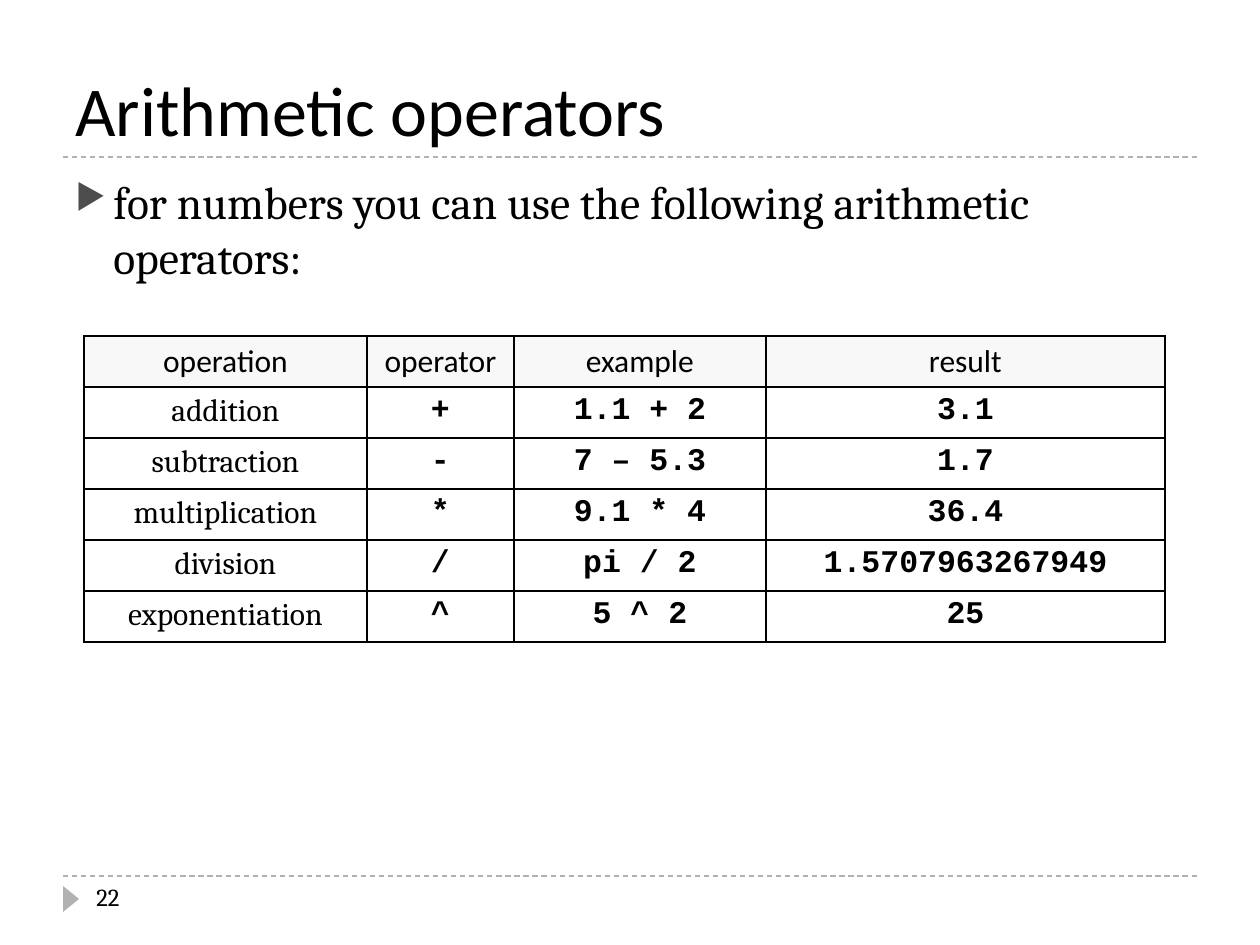
import pptx
import pptx.dml.color
import pptx.enum.dml
import pptx.enum.shapes
import pptx.enum.text
import pptx.oxml
import pptx.oxml.ns
import pptx.util

EMU_PER_PX = 914400 / 126
COLORS = {"text": "000000", "rule": "B2B2B2", "bullet": "4D4D4D",
          "header": "F8F8F8", "cell": "FFFFFF", "border": "000000"}

TITLE = "Arithmetic operators"
INTRO = "for numbers you can use the following arithmetic operators:"
PAGE_NUMBER = "22"
HEADER = ["operation", "operator", "example", "result"]
OPERATIONS = [
    ["addition", "+", "1.1 + 2", "3.1"],
    ["subtraction", "-", "7 – 5.3", "1.7"],
    ["multiplication", "*", "9.1 * 4", "36.4"],
    ["division", "/", "pi / 2", "1.5707963267949"],
    ["exponentiation", "^", "5 ^ 2", "25"],
]

TITLE_BOX = (63, 21, 1134, 136)
INTRO_BOX = (63, 168, 1134, 680)
NUMBER_BOX = (84, 876, 273, 50)
MARKER_BOX = (58, 891, 26, 16)
RULE_LEFT, RULE_RIGHT = 63, 1197
RULE_TOPS = [876, 157]
TABLE_LEFT, TABLE_TOP = 84, 336
COLUMN_WIDTHS = [283, 147, 252, 399]
ROW_HEIGHT = 51
BULLET_INDENT = 38

FONTS = {
    "title": {"name": "Calibri", "size": pptx.util.Pt(40)},
    "intro": {"name": "Cambria", "size": pptx.util.Pt(26)},
    "number": {"name": "Cambria", "size": pptx.util.Pt(14)},
    "header": {"name": "Calibri", "size": pptx.util.Pt(18), "bold": False},
    "label": {"name": "Cambria", "size": pptx.util.Pt(18), "bold": False},
    "code": {"name": "Courier New", "size": pptx.util.Pt(18), "bold": True},
}


def px(length):
    return pptx.util.Emu(round(length * EMU_PER_PX))


def rgb(name):
    return pptx.dml.color.RGBColor.from_string(COLORS[name])


def append_xml(parent, markup):
    namespaces = pptx.oxml.ns.nsdecls("a")
    tag, rest = markup.split(" ", 1)
    parent.append(pptx.oxml.parse_xml(f"{tag} {namespaces} {rest}"))


def write(text_frame, text, font_name):
    paragraph = text_frame.paragraphs[0]
    run = paragraph.add_run()
    run.text = text
    for attribute, value in FONTS[font_name].items():
        setattr(run.font, attribute, value)
    run.font.color.rgb = rgb("text")
    return paragraph


def add_text(slide, box, text, font_name, anchor=pptx.enum.text.MSO_ANCHOR.TOP):
    text_frame = slide.shapes.add_textbox(*map(px, box)).text_frame
    text_frame.word_wrap = True
    text_frame.vertical_anchor = anchor
    return write(text_frame, text, font_name)


def add_bullet(paragraph):
    paragraph.space_before = pptx.util.Pt(6)
    properties = paragraph._p.get_or_add_pPr()
    properties.set("marL", str(px(BULLET_INDENT)))
    properties.set("indent", str(-px(BULLET_INDENT)))
    for markup in (
        f'<a:buClr ><a:srgbClr val="{COLORS["bullet"]}"/></a:buClr>',
        '<a:buSzPct val="76000"/>',
        '<a:buChar char="▶"/>',
    ):
        append_xml(properties, markup)


def add_rule(slide, top):
    rule = slide.shapes.add_connector(
        pptx.enum.shapes.MSO_CONNECTOR.STRAIGHT,
        px(RULE_LEFT), px(top), px(RULE_RIGHT), px(top))
    rule.line.color.rgb = rgb("rule")
    rule.line.width = pptx.util.Pt(0.75)
    rule.line.dash_style = pptx.enum.dml.MSO_LINE.DASH
    append_xml(rule._element.spPr, "<a:effectLst />")


def add_page_marker(slide):
    marker = slide.shapes.add_shape(
        pptx.enum.shapes.MSO_SHAPE.ISOSCELES_TRIANGLE, *map(px, MARKER_BOX))
    marker.rotation = 90
    marker.shadow.inherit = False
    marker.fill.solid()
    marker.fill.fore_color.rgb = rgb("rule")
    marker.line.fill.background()


def format_cell(cell, text, font_name, fill):
    paragraph = write(cell.text_frame, text, font_name)
    paragraph.alignment = pptx.enum.text.PP_ALIGN.CENTER
    properties = cell._tc.get_or_add_tcPr()
    for side in ("lnL", "lnR", "lnT", "lnB"):
        append_xml(properties,
                   f'<a:{side} w="{pptx.util.Pt(1)}"><a:solidFill>'
                   f'<a:srgbClr val="{COLORS["border"]}"/></a:solidFill></a:{side}>')
    cell.fill.solid()
    cell.fill.fore_color.rgb = rgb(fill)


def add_operator_table(slide):
    rows = [HEADER] + OPERATIONS
    table = slide.shapes.add_table(
        len(rows), len(HEADER), px(TABLE_LEFT), px(TABLE_TOP),
        px(sum(COLUMN_WIDTHS)), px(ROW_HEIGHT * len(rows))).table
    for column, width in zip(table.columns, COLUMN_WIDTHS):
        column.width = px(width)
    for row_index, texts in enumerate(rows):
        table.rows[row_index].height = px(ROW_HEIGHT)
        for column_index, text in enumerate(texts):
            if row_index == 0:
                font_name, fill = "header", "header"
            else:
                font_name, fill = ("code" if column_index else "label"), "cell"
            format_cell(table.cell(row_index, column_index), text, font_name, fill)


def main():
    presentation = pptx.Presentation()
    presentation.slide_width, presentation.slide_height = px(1260), px(945)
    slide = presentation.slides.add_slide(presentation.slide_layouts[6])
    for top in RULE_TOPS:
        add_rule(slide, top)
    add_page_marker(slide)
    add_text(slide, TITLE_BOX, TITLE, "title", pptx.enum.text.MSO_ANCHOR.BOTTOM)
    add_bullet(add_text(slide, INTRO_BOX, INTRO, "intro"))
    add_text(slide, NUMBER_BOX, PAGE_NUMBER, "number")
    add_operator_table(slide)
    presentation.save("out.pptx")


if __name__ == "__main__":
    main()
